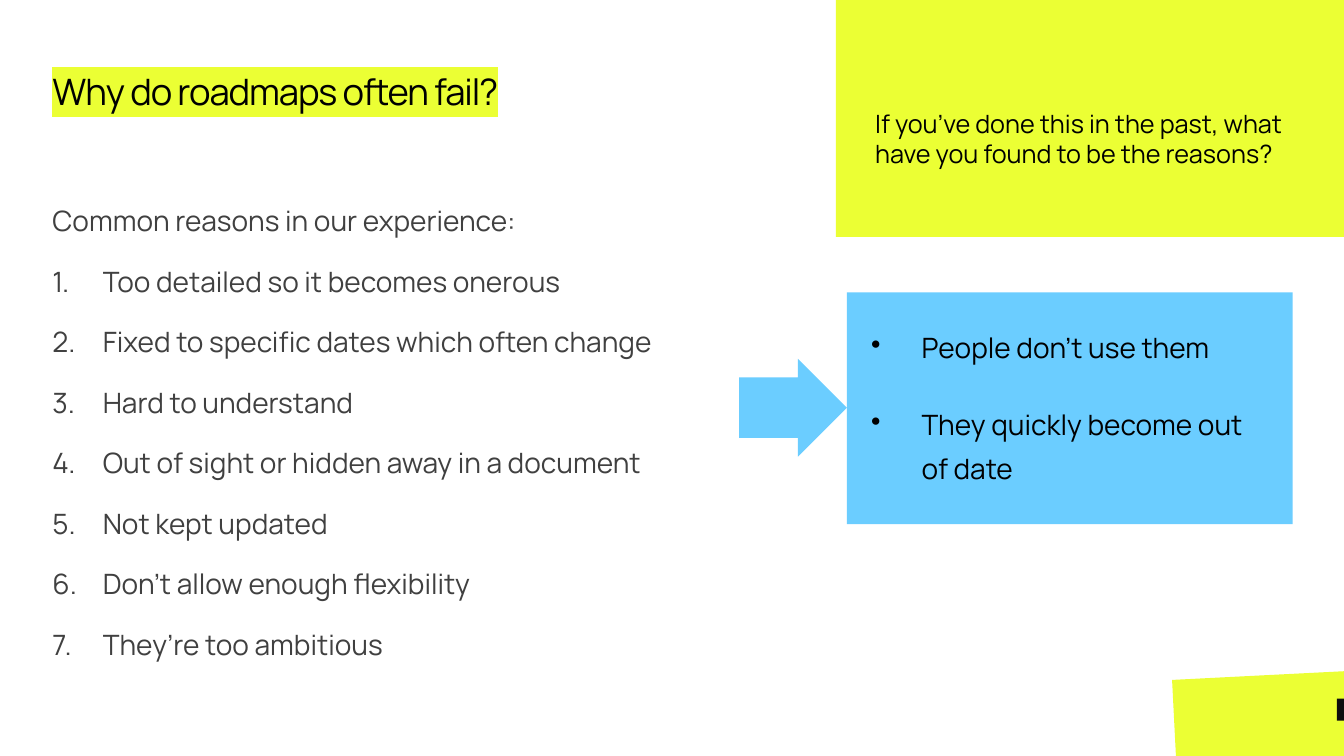
import pptx
import pptx.util
import pptx.dml.color
import pptx.enum.shapes
import pptx.enum.text
import pptx.oxml
import pptx.oxml.ns

Inches = pptx.util.Inches
Pt = pptx.util.Pt
Kind = pptx.enum.shapes.MSO_SHAPE
hues = {"lime": "EBFF34", "sky": "6BCDFF", "ink": "0D0D0D",
        "black": "000000", "grey": "404040"}
space = pptx.oxml.ns.nsdecls("a")

deck = pptx.Presentation()
deck.slide_width = Inches(13.33)
deck.slide_height = Inches(7.5)
slide = deck.slides.add_slide(deck.slide_layouts[6])


def block(kind, spot, hue):
    shape = slide.shapes.add_shape(kind, *[Inches(n) for n in spot])
    shape.shadow.inherit = False
    shape.fill.solid()
    shape.fill.fore_color.rgb = pptx.dml.color.RGBColor.from_string(hues[hue])
    shape.line.fill.background()
    return shape


def write(shape, pad, lines, size, hue, form):
    frame = shape.text_frame
    sides = ("margin_left", "margin_top", "margin_right", "margin_bottom")
    look = dict(zip(sides, [Inches(n) for n in pad]))
    look.update(word_wrap=True, vertical_anchor=pptx.enum.text.MSO_ANCHOR.TOP)
    for key, value in look.items():
        setattr(frame, key, value)
    for row, (text, mark) in enumerate(lines):
        para = frame.paragraphs[0] if row == 0 else frame.add_paragraph()
        if mark:
            props = para._p.get_or_add_pPr()
            props.set("marL", str(Inches(0.5)))
            props.set("indent", str(-Inches(0.5)))
            props.append(pptx.oxml.parse_xml(mark))
        for key, value in form.items():
            setattr(para, key, value)
        para.alignment = pptx.enum.text.PP_ALIGN.LEFT
        run = para.add_run()
        run.text = text
        run.font.name = "Manrope"
        run.font.size = Pt(size)
        run.font.color.rgb = pptx.dml.color.RGBColor.from_string(hues[hue])


tilt = block(Kind.RECTANGLE, (11.65, 6.7, 1.76, 1.02), "lime")
tilt.rotation = 357.1
block(Kind.RECTANGLE, (13.26, 6.93, 0.08, 0.22), "ink")

digit = f'<a:buAutoNum {space} type="arabicPeriod"/>'
dot = f'<a:buChar {space} char="•"/>'
causes = [
    "Too detailed so it becomes onerous",
    "Fixed to specific dates which often change",
    "Hard to understand",
    "Out of sight or hidden away in a document",
    "Not kept updated",
    "Don’t allow enough flexibility",
    "They’re too ambitious",
]
body = slide.shapes.add_textbox(Inches(0.52), Inches(1.92), Inches(6.66), Inches(4.55))
lines = [("Common reasons in our experience:", None)]
lines += [(cause, digit) for cause in causes]
write(body, (0, 0, 0.1, 0.05), lines, 20, "grey",
      {"line_spacing": 1.3, "space_after": Pt(12)})

title = slide.shapes.add_textbox(Inches(0.52), Inches(0.51), Inches(7.92), Inches(0.62))
write(title, (0, 0.05, 0.1, 0), [("Why do roadmaps often fail?", None)], 26, "black",
      {"line_spacing": 1.3})
props = title.text_frame.paragraphs[0].runs[0]._r.get_or_add_rPr()
props.set("spc", "-80")
glow = f'<a:highlight {space}><a:srgbClr val="{hues["lime"]}"/></a:highlight>'
props.find(pptx.oxml.ns.qn("a:solidFill")).addnext(pptx.oxml.parse_xml(glow))

block(Kind.RECTANGLE, (8.4, 2.9, 4.42, 2.3), "sky")
result = block(Kind.RECTANGLE, (8.64, 3.18, 3.94, 1.93), "sky")
ends = ["People don’t use them", "They quickly become out of date"]
write(result, (0, 0, 0.1, 0.05), [(end, dot) for end in ends], 20, "black",
      {"line_spacing": 1.3, "space_after": Pt(24)})

arrow = block(Kind.RIGHT_ARROW, (7.33, 3.56, 1.07, 0.97), "sky")
arrow.adjustments[0] = 0.62
arrow.adjustments[1] = 0.5

prompt = block(Kind.RECTANGLE, (8.29, -0.17, 5.05, 2.52), "lime")
ask = "If you’ve done this in the past, what have you found to be the reasons?"
write(prompt, (0.39, 1.24, 0.3, 0.05), [(ask, None)], 18, "black", {})

deck.save("out.pptx")
